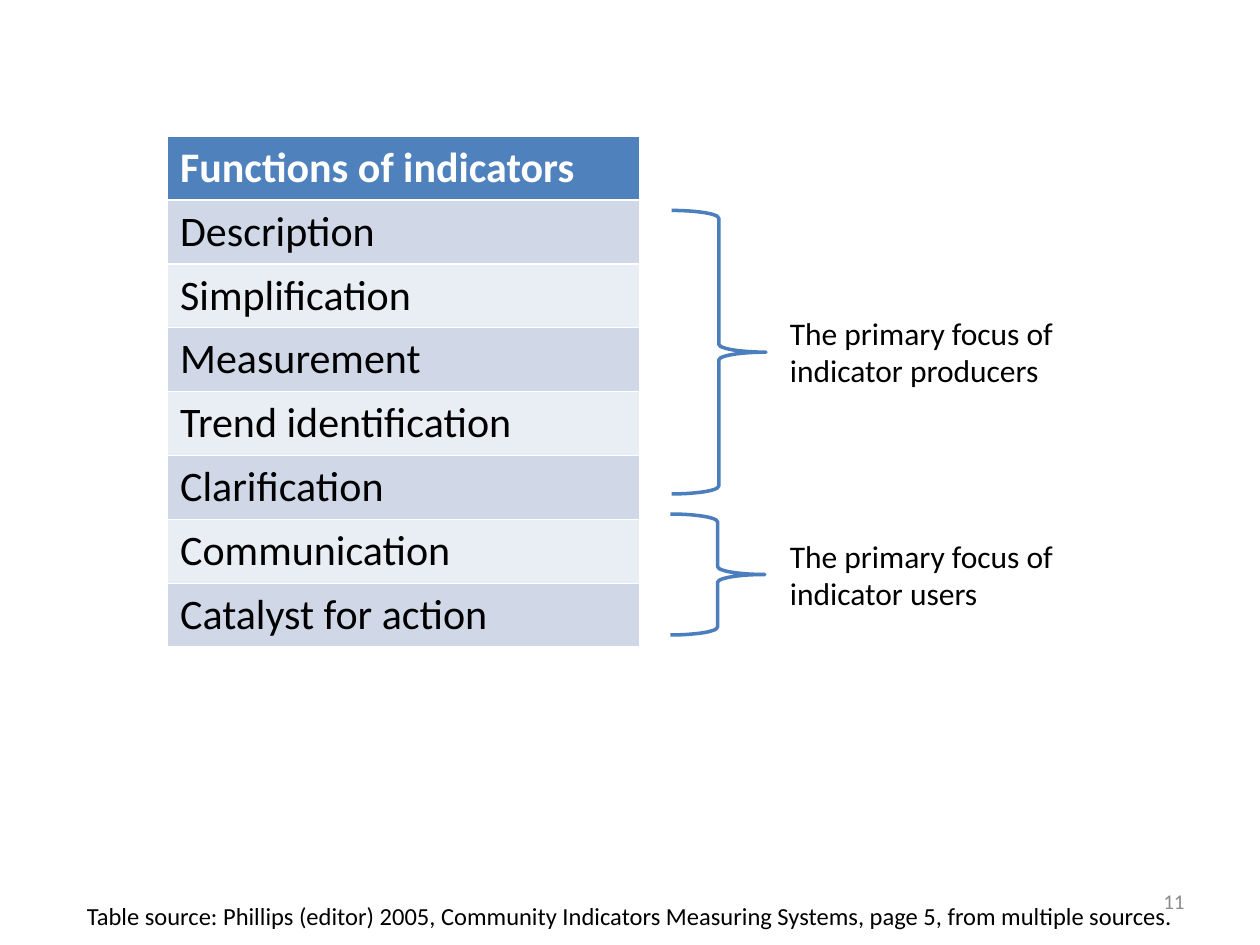
"""Build a slide on the functions of indicators and who focuses on them."""
from dataclasses import dataclass

from pptx import Presentation
from pptx.dml.color import RGBColor as Rgb
from pptx.enum.shapes import MSO_SHAPE as Shape
from pptx.enum.text import MSO_ANCHOR as Anchor, PP_ALIGN as Align
from pptx.util import Inches, Pt


@dataclass(frozen=True)
class Theme:
    font: str = "Calibri"
    head: str = "4F81BD"
    bands: tuple = ("D0D8E8", "E9EDF4")
    line: str = "4B7EBC"
    white: str = "FFFFFF"
    black: str = "000000"
    grey: str = "8C8C8C"
    cell: int = 24
    label: int = 18
    source: int = 14
    number: int = 12
    stroke: int = 2


THEME = Theme()
TITLE = "Functions of indicators"
ITEMS = ["Description", "Simplification", "Measurement", "Trend identification",
         "Clarification", "Communication", "Catalyst for action"]
GROUPS = [
    ((5.33, 1.67, 0.75, 2.25), 2.44, "The primary focus of indicator producers"),
    ((5.32, 4.08, 0.75, 0.96), 4.21, "The primary focus of indicator users"),
]
SOURCE = ("Table source: Phillips (editor) 2005, Community Indicators "
          "Measuring Systems, page 5, from multiple sources.")


def place(box):
    return [Inches(side) for side in box]


def write(frame, text, size, color, align=Align.LEFT, bold=False):
    para = frame.paragraphs[0]
    para.alignment = align
    run = para.add_run()
    run.text = text
    font = run.font
    font.name, font.size, font.bold = THEME.font, Pt(size), bold
    font.color.rgb = Rgb.from_string(color)


def add_label(slide, box, text, size, color=THEME.black,
              align=Align.LEFT, anchor=Anchor.TOP):
    frame = slide.shapes.add_textbox(*place(box)).text_frame
    frame.word_wrap = True
    frame.vertical_anchor = anchor
    write(frame, text, size, color, align)


def fill_cell(cell, text, fill, color, bold=False):
    cell.fill.solid()
    cell.fill.fore_color.rgb = Rgb.from_string(fill)
    write(cell.text_frame, text, THEME.cell, color, bold=bold)


def add_list(slide, box):
    table = slide.shapes.add_table(len(ITEMS) + 1, 1, *place(box)).table
    fill_cell(table.cell(0, 0), TITLE, THEME.head, THEME.white, True)
    for row, item in enumerate(ITEMS):
        band = THEME.bands[row % 2]
        fill_cell(table.cell(row + 1, 0), item, band, THEME.black)


def add_brace(slide, box):
    brace = slide.shapes.add_shape(Shape.RIGHT_BRACE, *place(box))
    brace.shadow.inherit = False
    brace.fill.background()
    brace.line.color.rgb = Rgb.from_string(THEME.line)
    brace.line.width = Pt(THEME.stroke)


def main():
    deck = Presentation()
    deck.slide_width, deck.slide_height = Inches(10), Inches(7.5)
    slide = deck.slides.add_slide(deck.slide_layouts[6])
    add_list(slide, (1.33, 1.08, 3.75, 4))
    add_label(slide, (0, 7.1, 10, 0.34), SOURCE, THEME.source,
              align=Align.CENTER)
    for box, top, text in GROUPS:
        add_brace(slide, box)
        add_label(slide, (6.17, top, 2.58, 0.71), text, THEME.label)
    add_label(slide, (7.17, 6.95, 2.33, 0.4), "11", THEME.number,
              THEME.grey, Align.RIGHT, Anchor.MIDDLE)
    deck.save("out.pptx")


if __name__ == "__main__":
    main()
